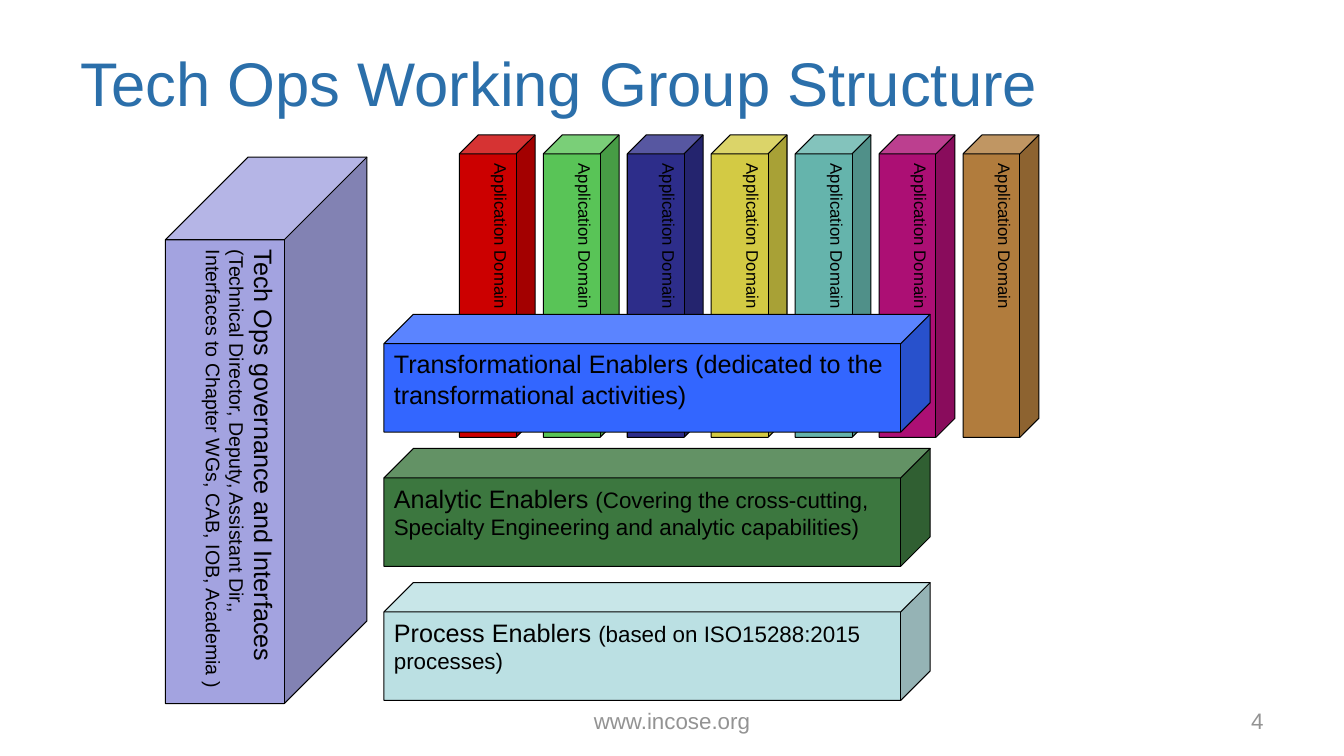
from pptx import Presentation
from pptx.dml.color import RGBColor
from pptx.enum.shapes import MSO_SHAPE as Shape
from pptx.enum.text import MSO_ANCHOR as Anchor, PP_ALIGN as Align
from pptx.util import Cm, Pt

COLORS = {
    "title": "2B6FAA", "footer": "939393", "ink": "000000",
    "governance": "A3A3E0", "transformational": "3366FF",
    "analytic": "3C773F", "process": "BBE0E3",
    "red": "CC0000", "green": "59C457", "navy": "2D2D8A", "yellow": "D3CA44",
    "teal": "65B4AC", "magenta": "AC0F74", "brown": "B17C3D",
}
DOMAINS = ["red", "green", "navy", "yellow", "teal", "magenta", "brown"]
ENABLERS = [
    ("transformational", [("Transformational Enablers (dedicated to the transformational activities)", 18)]),
    ("analytic", [("Analytic Enablers ", 18),
                  ("(Covering the cross-cutting, Specialty Engineering and analytic capabilities)", 16)]),
    ("process", [("Process Enablers ", 18), ("(based on ISO15288:2015 processes)", 16)]),
]
GOVERNANCE = [
    [("Tech Ops governance and Interfaces", 18)],
    [("(Technical Director, Deputy, Assistant Dir,,", 14)],
    [("Interfaces to Chapter WGs, CAB, IOB, Academia )", 14)],
]
PAGE_FRAME = {"word_wrap": True, "vertical_anchor": Anchor.MIDDLE,
              "margin_left": Cm(0.33), "margin_right": Cm(0.33),
              "margin_top": Cm(0.18), "margin_bottom": Cm(0.18)}
CUBE_FRAME = {"word_wrap": True, "vertical_anchor": Anchor.TOP}


def rgb(name):
    return RGBColor.from_string(COLORS[name])


def set_all(target, values):
    for name, value in values.items():
        setattr(target, name, value)


def write(frame, paragraphs, color, align=Align.LEFT):
    """Fill a text frame; each paragraph is a list of (text, point size)."""
    for index, runs in enumerate(paragraphs):
        paragraph = frame.add_paragraph() if index else frame.paragraphs[0]
        paragraph.alignment = align
        for text, size in runs:
            run = paragraph.add_run()
            run.text = text
            set_all(run.font, {"name": "Arial", "size": Pt(size)})
            run.font.color.rgb = rgb(color)


def add_cube(slide, box, color, paragraphs, depth=0.25, vertical=False):
    cube = slide.shapes.add_shape(Shape.CUBE, *map(Cm, box))
    cube.shadow.inherit = False
    cube.adjustments[0] = depth
    cube.fill.solid()
    cube.fill.fore_color.rgb = rgb(color)
    cube.line.color.rgb = rgb("ink")
    cube.line.width = Pt(0.75)
    frame = cube.text_frame
    set_all(frame, CUBE_FRAME)
    if vertical:
        body = frame.paragraphs[0]._p.getparent().find("{*}bodyPr")
        body.set("vert", "vert")
    write(frame, paragraphs, "ink")


def add_title(slide, box):
    title = slide.shapes.title
    set_all(title, dict(zip(("left", "top", "width", "height"), map(Cm, box))))
    set_all(title.text_frame, PAGE_FRAME)
    write(title.text_frame, [[("Tech Ops Working Group Structure", 44)]], "title")


def add_footer_text(slide, box, text, align):
    frame = slide.shapes.add_textbox(*map(Cm, box)).text_frame
    set_all(frame, PAGE_FRAME)
    write(frame, [[(text, 16)]], "footer", align)


def add_domains(slide, box):
    """Stand the application domains side by side across the box."""
    left, top, width, height = box
    cube_width = 1.91
    step = (width - cube_width) / (len(DOMAINS) - 1)
    for index, color in enumerate(DOMAINS):
        add_cube(slide, (left + index * step, top, cube_width, height), color,
                 [[("Application Domain", 12)]], vertical=True)


def add_enablers(slide, box):
    """Stack the enabler bars at equal steps down the box."""
    left, top, width, height = box
    bar_height = 2.97
    step = (height - bar_height) / (len(ENABLERS) - 1)
    for index, (color, runs) in enumerate(ENABLERS):
        add_cube(slide, (left, top + index * step, width, bar_height), color, [runs])


def main():
    deck = Presentation()
    deck.slide_width, deck.slide_height = Cm(33.88), Cm(19.05)
    slide = deck.slides.add_slide(deck.slide_layouts[5])
    add_title(slide, (1.7, 0.48, 30.5, 3.18))
    add_footer_text(slide, (11.58, 17.65, 10.72, 1.02), "www.incose.org", Align.CENTER)
    add_footer_text(slide, (24.28, 17.65, 7.9, 1.02), "4", Align.RIGHT)
    add_cube(slide, (4.17, 3.96, 5.08, 13.77), "governance", GOVERNANCE,
             depth=0.41, vertical=True)
    add_domains(slide, (11.58, 3.4, 14.61, 7.62))
    add_enablers(slide, (9.68, 7.92, 13.77, 9.73))
    deck.save("out.pptx")


if __name__ == "__main__":
    main()
